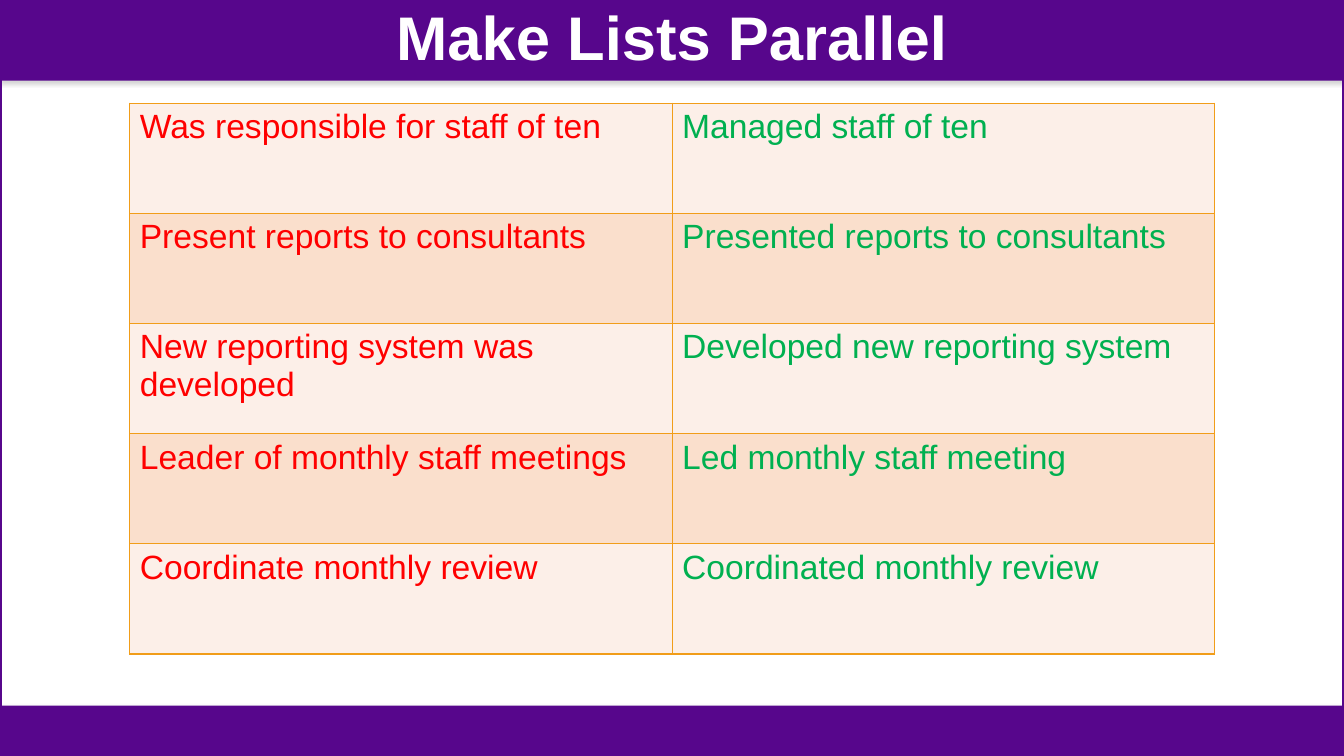
import pptx
import pptx.dml.color
import pptx.enum.shapes
import pptx.enum.text
import pptx.oxml
import pptx.oxml.ns
import pptx.util

Pt = pptx.util.Pt
NS = pptx.oxml.ns.nsdecls("a")
WIDTH, HEIGHT = 960, 540
BAR_HEIGHT, FOOTER_HEIGHT = 57.6, 36
ROWS = [
    ("Was responsible for staff of ten", "Managed staff of ten"),
    ("Present reports to consultants", "Presented reports to consultants"),
    ("New reporting system was developed", "Developed new reporting system"),
    ("Leader of monthly staff meetings", "Led monthly staff meeting"),
    ("Coordinate monthly review", "Coordinated monthly review"),
]


def rgb(value):
    return pptx.dml.color.RGBColor.from_string(value)


def write(tf, text, size, color, bold=False, align=None, spacing=None):
    p = tf.paragraphs[0]
    p.alignment = align
    p.line_spacing = spacing
    r = p.add_run()
    r.text = text
    r.font.name = "Arial"
    r.font.size = Pt(size)
    r.font.bold = bold
    r.font.color.rgb = rgb(color)


class Deck:
    """Holds the slide style and adds each kind of element to the current slide."""

    purple, white, orange = "57068C", "FFFFFF", "F19D19"
    columns = ("FF0000", "00B050")
    bands = ("FCEFE8", "FADFCC")

    def __init__(self, prs):
        self.s = prs.slides.add_slide(prs.slide_layouts[5])
        self.s.background.fill.solid()
        self.s.background.fill.fore_color.rgb = rgb(self.white)

    def rectangle(self, x, y, w, h):
        sp = self.s.shapes.add_shape(
            pptx.enum.shapes.MSO_SHAPE.RECTANGLE, Pt(x), Pt(y), Pt(w), Pt(h))
        sp.shadow.inherit = False
        return sp

    def bar(self, y, h):
        sp = self.rectangle(0, y, WIDTH, h)
        sp.fill.solid()
        sp.fill.fore_color.rgb = rgb(self.purple)
        sp.line.fill.background()
        effects = sp.element.spPr.find(pptx.oxml.ns.qn("a:effectLst"))
        effects.append(pptx.oxml.parse_xml(
            f'<a:outerShdw {NS} blurRad="{Pt(3.1)}" dist="{Pt(1.8)}" dir="5400000" '
            'algn="t" rotWithShape="0"><a:srgbClr val="808080">'
            '<a:alpha val="35000"/></a:srgbClr></a:outerShdw>'))

    def frame(self):
        sp = self.rectangle(0, 0, WIDTH, HEIGHT)
        sp.fill.background()
        sp.line.color.rgb = rgb(self.purple)
        sp.line.width = Pt(2.25)

    def title(self, text):
        sp = self.s.shapes.title
        sp.left, sp.top, sp.width, sp.height = Pt(0), Pt(0), Pt(WIDTH), Pt(BAR_HEIGHT)
        sp.element.getparent().append(sp.element)
        tf = sp.text_frame
        tf.word_wrap = True
        tf.auto_size = pptx.enum.text.MSO_AUTO_SIZE.NONE
        tf.vertical_anchor = pptx.enum.text.MSO_ANCHOR.MIDDLE
        write(tf, text, 44, self.white, bold=True,
              align=pptx.enum.text.PP_ALIGN.CENTER, spacing=0.9)

    def borders(self, cell):
        tcPr = cell._tc.get_or_add_tcPr()
        for side in "LRTB":
            tcPr.append(pptx.oxml.parse_xml(
                f'<a:ln{side} {NS} w="{Pt(1)}"><a:solidFill>'
                f'<a:srgbClr val="{self.orange}"/></a:solidFill></a:ln{side}>'))

    def table(self, rows, x, y, w, h):
        table = self.s.shapes.add_table(
            len(rows), len(rows[0]), Pt(x), Pt(y), Pt(w), Pt(h)).table
        table.first_row = False
        for i, row in enumerate(rows):
            for j, text in enumerate(row):
                cell = table.cell(i, j)
                self.borders(cell)
                cell.fill.solid()
                cell.fill.fore_color.rgb = rgb(self.bands[i % 2])
                write(cell.text_frame, text, 24, self.columns[j])


def main():
    prs = pptx.Presentation()
    prs.slide_width, prs.slide_height = Pt(WIDTH), Pt(HEIGHT)
    deck = Deck(prs)
    deck.bar(0, BAR_HEIGHT)
    deck.frame()
    deck.bar(HEIGHT - FOOTER_HEIGHT, FOOTER_HEIGHT)
    deck.title("Make Lists Parallel")
    deck.table(ROWS, 92.7, 73.7, 774.8, 393.5)
    prs.save("out.pptx")


if __name__ == "__main__":
    main()
